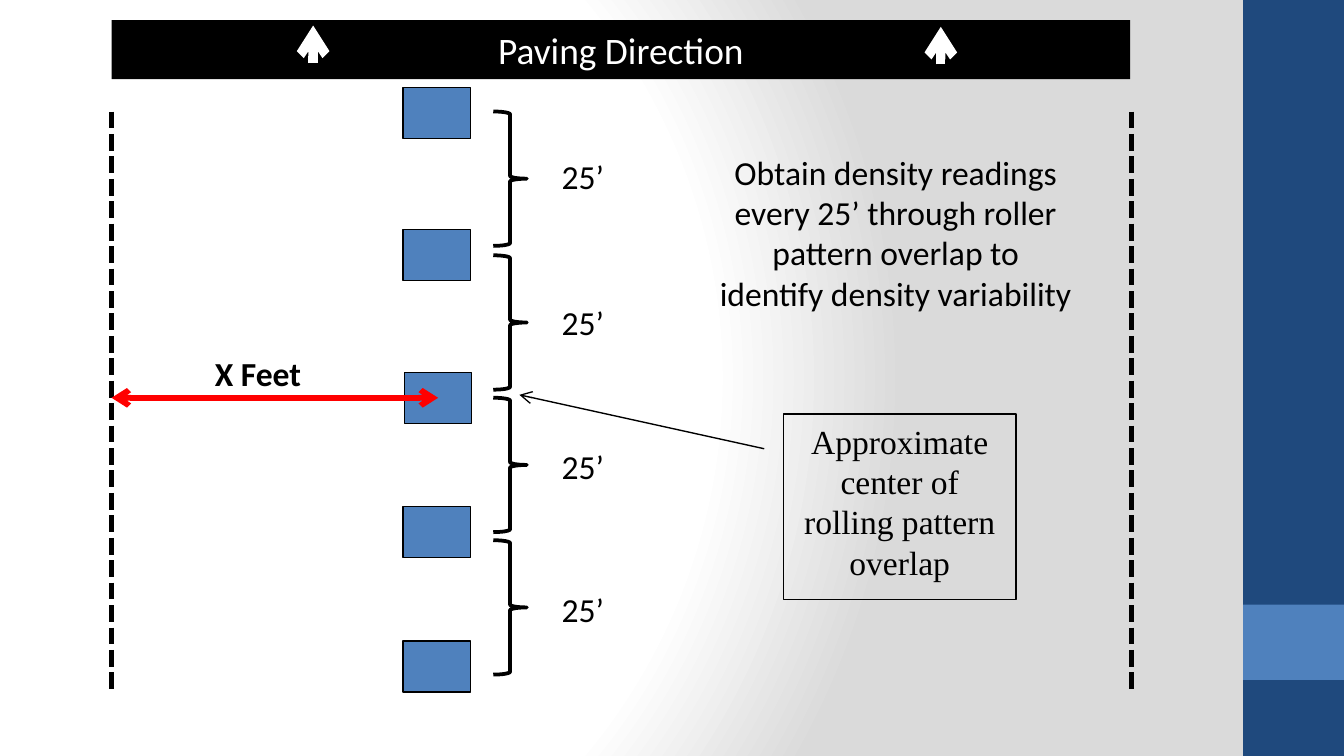
from typing import NamedTuple, Optional

from lxml import etree
from pptx import Presentation
from pptx.dml.color import RGBColor
from pptx.enum import dml, shapes, text
from pptx.oxml import ns, parse_xml
from pptx.util import Inches, Pt

SLIDE_WIDTH = 10
SLIDE_HEIGHT = SLIDE_WIDTH * 9 / 16
BLACK = RGBColor(0x00, 0x00, 0x00)
WHITE = RGBColor(0xFF, 0xFF, 0xFF)
RED = RGBColor(0xFF, 0x00, 0x00)
NAVY = RGBColor(0x1F, 0x49, 0x7D)
BLUE = RGBColor(0x4F, 0x81, 0xBD)
SHAPE = shapes.MSO_SHAPE
CENTER = text.PP_ALIGN.CENTER

BACKGROUND = f"""<p:bg {ns.nsdecls("p", "a")}><p:bgPr><a:gradFill rotWithShape="1"><a:gsLst>
<a:gs pos="0"><a:srgbClr val="FFFFFF"/></a:gs>
<a:gs pos="75000"><a:srgbClr val="FFFFFF"/></a:gs>
<a:gs pos="100000"><a:srgbClr val="DADADA"/></a:gs></a:gsLst>
<a:path path="circle"><a:fillToRect l="20000" t="50000" r="100000" b="50000"/></a:path>
</a:gradFill><a:effectLst/></p:bgPr></p:bg>"""


class Box(NamedTuple):
    left: float
    top: float
    width: float
    height: float


class Line(NamedTuple):
    x1: float
    y1: float
    x2: float
    y2: float
    color: RGBColor
    width: float
    ends: tuple[str, ...] = ()
    dashed: bool = False


def add_arrowheads(sp, ends: tuple[str, ...]) -> None:
    ln = sp._element.spPr.find(ns.qn("a:ln"))
    for end in ends:
        etree.SubElement(ln, ns.qn(f"a:{end}"), type="arrow")


def draw_line(s, line: Line) -> None:
    c = s.shapes.add_connector(
        shapes.MSO_CONNECTOR.STRAIGHT, *map(Inches, line[:4]))
    c.line.color.rgb = line.color
    c.line.width = Pt(line.width)
    if line.dashed:
        c.line.dash_style = dml.MSO_LINE.SQUARE_DOT
    add_arrowheads(c, line.ends)
    etree.SubElement(c._element.spPr, ns.qn("a:effectLst"))


def draw_shape(s, kind: SHAPE, box: Box, fill: Optional[RGBColor] = None,
               line_width: float = 0):
    sp = s.shapes.add_shape(kind, *map(Inches, box))
    sp.shadow.inherit = False
    if fill is None:
        sp.fill.background()
    else:
        sp.fill.solid()
        sp.fill.fore_color.rgb = fill
    if line_width:
        sp.line.color.rgb = BLACK
        sp.line.width = Pt(line_width)
    else:
        sp.line.fill.background()
    return sp


def write(sp, words: str, size: float = 18, font: str = "Calibri",
          color: RGBColor = BLACK, bold: bool = False,
          align: text.PP_ALIGN = text.PP_ALIGN.LEFT, grow: bool = True) -> None:
    tf = sp.text_frame
    tf.word_wrap = True
    tf.vertical_anchor = text.MSO_ANCHOR.TOP
    if grow:
        tf.auto_size = text.MSO_AUTO_SIZE.SHAPE_TO_FIT_TEXT
    p = tf.paragraphs[0]
    p.alignment = align
    r = p.add_run()
    r.text = words
    r.font.size = Pt(size)
    r.font.name = font
    r.font.bold = bold
    r.font.color.rgb = color


def draw_label(s, box: Box, words: str, **style) -> None:
    write(s.shapes.add_textbox(*map(Inches, box)), words, **style)


def main() -> None:
    prs = Presentation()
    prs.slide_width, prs.slide_height = Inches(SLIDE_WIDTH), Inches(SLIDE_HEIGHT)
    s = prs.slides.add_slide(prs.slide_layouts[6])
    s._element.cSld.insert(0, parse_xml(BACKGROUND))

    draw_shape(s, SHAPE.RECTANGLE, Box(9.25, 0, 0.75, SLIDE_HEIGHT), NAVY)
    draw_shape(s, SHAPE.RECTANGLE, Box(9.25, 4.5, 0.75, 0.56), BLUE)

    for x in (0.83, 8.42):
        draw_line(s, Line(x, 0.83, x, 5.15, BLACK, 3, dashed=True))

    for left, top in ((3.01, 2.77), (3, 1.71), (3, 0.65), (3, 4.77), (3, 3.77)):
        draw_shape(s, SHAPE.RECTANGLE, Box(left, top, 0.5, 0.38), BLUE, 0.75)

    draw_label(s, Box(5.25, 1.08, 2.83, 1.31),
               "Obtain density readings every 25’ through roller pattern "
               "overlap to identify density variability", align=CENTER)

    draw_line(s, Line(0.83, 2.96, 3.26, 2.96, RED, 3, ("headEnd", "tailEnd")))
    draw_label(s, Box(1.5, 2.58, 1.17, 0.4), "X Feet", bold=True)

    for top in (1.9, 0.83, 2.96, 4.02):
        draw_shape(s, SHAPE.RIGHT_BRACE, Box(3.67, top, 0.25, 1), line_width=2)
    for top in (1.11, 2.2, 3.27, 4.33):
        draw_label(s, Box(4.08, top, 1.17, 0.4), "25’")

    callout = draw_shape(s, SHAPE.LINE_CALLOUT_1, Box(5.83, 3.08, 1.73, 1.38),
                         line_width=0.75)
    for i, value in enumerate((0.188, -0.083, -0.103, -1.136)):
        callout.adjustments[i] = value
    add_arrowheads(callout, ("tailEnd",))
    write(callout, "Approximate center of rolling pattern overlap",
          font="Times New Roman", align=CENTER, grow=False)

    banner = draw_shape(s, SHAPE.RECTANGLE, Box(0.83, 0.15, 7.58, 0.44), BLACK)
    write(banner, "Paving Direction", size=20, color=WHITE, align=CENTER)
    for x, y in ((2.33, 0.47), (7, 0.48)):
        draw_line(s, Line(x, y, x, y - 0.28, WHITE, 5, ("tailEnd",)))

    prs.save("out.pptx")


if __name__ == "__main__":
    main()
